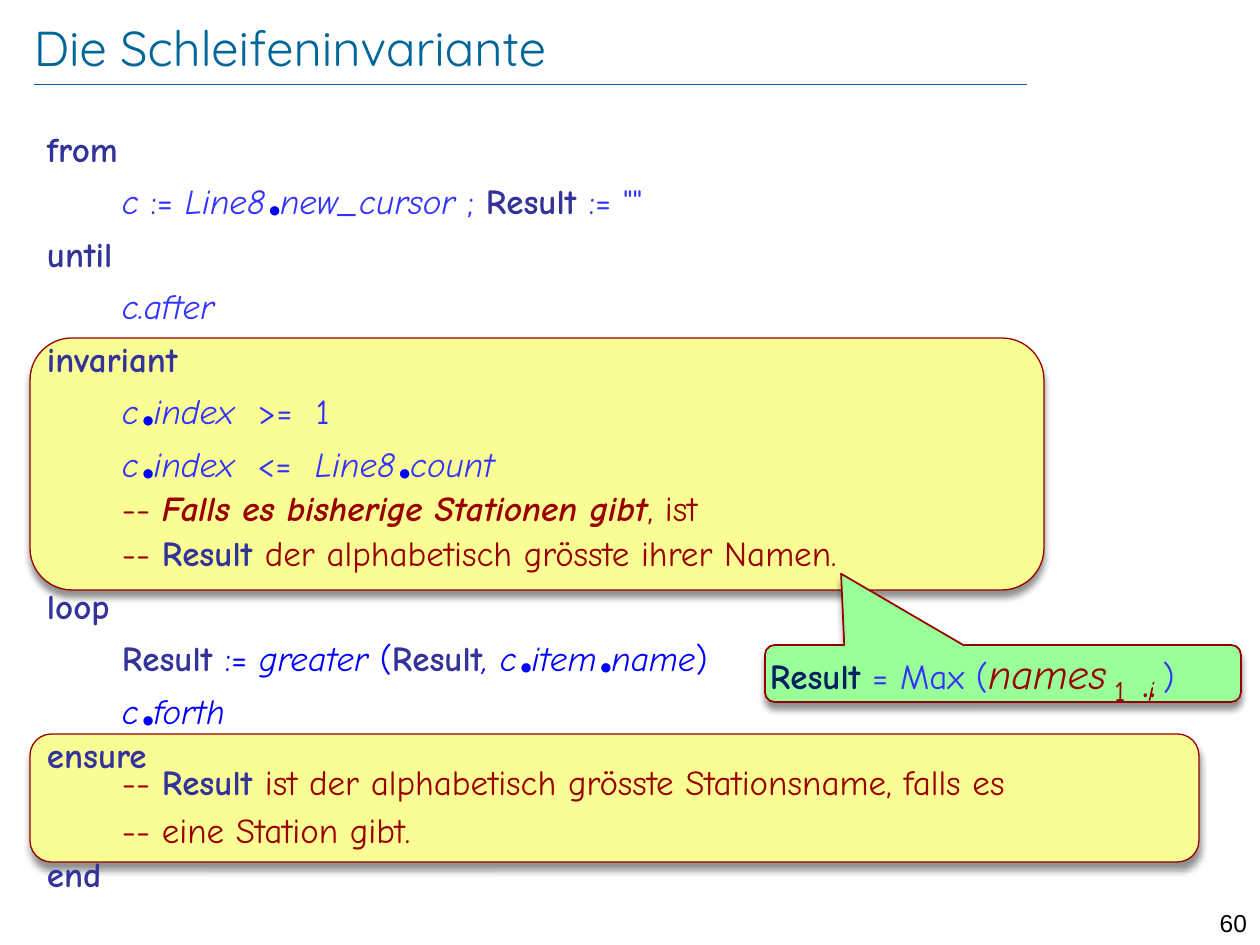
"""Build the slide that explains the loop invariant."""
from dataclasses import dataclass
from typing import NamedTuple

from lxml import etree
from pptx import Presentation, util as u
from pptx.dml.color import RGBColor
from pptx.enum import shapes, text
from pptx.oxml import ns

PX = u.Inches(1) / 126


@dataclass(frozen=True)
class Theme:
    code_font: str = "Comic Neue"
    title_font: str = "Quicksand"
    number_font: str = "Arial"
    title: str = "006699"
    keyword: str = "333399"
    code: str = "3333FF"
    call: str = "0000FF"
    comment: str = "990000"
    result: str = "002060"
    number: str = "000000"
    panel: str = "FAFC94"
    callout: str = "99FF99"
    body_size: int = 20
    dot_size: int = 7
    title_size: int = 28
    number_size: int = 14
    names_size: int = 24
    index_size: int = 28
    range_size: int = 44


THEME = Theme()


class Box(NamedTuple):
    left: int
    top: int
    width: int
    height: int


class Panel(NamedTuple):
    box: Box
    preset: shapes.MSO_SHAPE
    fill: str
    line_width: float
    adjustments: tuple = ()


class Line(NamedTuple):
    spans: list
    indent: int = 0
    before: float = 6
    spacing: float = 1
    tab: int = 0


STYLES = {
    "keyword": dict(color=THEME.keyword, bold=True),
    "code": dict(color=THEME.code),
    "name": dict(color=THEME.code, italic=True),
    "call": dict(color=THEME.call),
    "feature": dict(color=THEME.call, italic=True),
    "dot": dict(color=THEME.call, size=THEME.dot_size),
    "comment": dict(color=THEME.comment),
    "stress": dict(color=THEME.comment, bold=True, italic=True),
    "title": dict(color=THEME.title, size=THEME.title_size, font=THEME.title_font),
    "number": dict(color=THEME.number, size=THEME.number_size, font=THEME.number_font),
    "result": dict(color=THEME.result, bold=True),
    "names": dict(color=THEME.comment, size=THEME.names_size, italic=True),
    "gap": dict(color=THEME.comment, size=14, italic=True),
    "index": dict(color=THEME.comment, size=THEME.index_size, baseline=-25),
    "variable": dict(color=THEME.comment, size=THEME.index_size, italic=True, baseline=-25),
    "range": dict(color=THEME.comment, size=THEME.range_size, baseline=-25),
}

INDENT = 75
DOT = (" ●", "dot")
INDEX = [("c", "name"), DOT, ("index", "name")]
PROGRAM = [
    Line([("from", "keyword")], before=0),
    Line([("c", "name"), (" := ", "code"), ("Line8", "name"), DOT, ("new_cursor ", "name"),
          ("; ", "code"), ("Result ", "keyword"), (':= ""', "code")], INDENT),
    Line([("until", "keyword")]),
    Line([("c.after", "name")], INDENT),
    Line([("invariant", "keyword")]),
    Line([*INDEX, ("  >=  1", "code")], INDENT),
    Line([*INDEX, ("  <=  ", "code"), ("Line8", "name"), DOT, ("count", "name")], INDENT),
    Line([("-- ", "comment"), ("Falls es bisherige Stationen gibt", "stress"),
          (", ist", "comment")], INDENT, 4, 0.9),
    Line([("-- ", "comment"), ("Result ", "keyword"),
          ("der alphabetisch grösste ihrer Namen.", "comment")], INDENT, 4, 0.9),
    Line([("loop", "keyword")]),
    Line([("Result ", "keyword"), (":= ", "call"), ("greater ", "feature"), ("(", "call"),
          ("Result", "keyword"), (", c", "feature"), DOT, ("item", "feature"), DOT,
          ("name", "feature"), (")", "call")], INDENT),
    Line([("c", "feature"), DOT, ("forth", "feature")], INDENT),
    Line([("ensure", "keyword")], spacing=0.8),
    Line([("-- ", "comment"), ("Result ", "keyword"),
          ("ist der alphabetisch grösste Stationsname, falls es", "comment")], INDENT, 4, 0.4),
    Line([("-- eine Station gibt.", "comment")], INDENT, 17.5, 0.4),
    Line([("end", "keyword")], spacing=0.9),
]
MAXIMUM = Line([("Result", "result"), (" = Max (", "code"), ("names", "names"), (" ", "gap"),
                ("1\t", "index"), ("i", "variable"), (" ", "gap"), (")", "code")],
               before=0, spacing=0.6, tab=383)
PANELS = [
    Panel(Box(30, 734, 1169, 128), shapes.MSO_SHAPE.ROUNDED_RECTANGLE, THEME.panel, 0.75),
    Panel(Box(30, 338, 1014, 252), shapes.MSO_SHAPE.ROUNDED_RECTANGLE, THEME.panel, 0.75),
    Panel(Box(765, 645, 476, 57), shapes.MSO_SHAPE.ROUNDED_RECTANGULAR_CALLOUT,
          THEME.callout, 1, (-0.34, -1.75, 0.17)),
]


def px(length: int) -> int:
    """Turn pixels into EMU."""
    return round(length * PX)


def add_run(paragraph, content: str, *, color: str, size: int = THEME.body_size,
            font: str = THEME.code_font, bold: bool = False, italic: bool = False,
            baseline: int = 0) -> None:
    """Append formatted text to a paragraph."""
    run = paragraph.add_run()
    run.text = content
    run.font.name, run.font.size = font, u.Pt(size)
    run.font.bold, run.font.italic = bold, italic
    run.font.color.rgb = RGBColor.from_string(color)
    if baseline:
        run.font._element.set("baseline", str(baseline * 1000))


def add_text(slide, box: Box, lines: list[Line], *, insets: tuple = (13, 6),
             anchor=text.MSO_ANCHOR.TOP, align=text.PP_ALIGN.LEFT) -> None:
    """Draw a text box with one paragraph per line."""
    frame = slide.shapes.add_textbox(*map(px, box)).text_frame
    frame.word_wrap, frame.vertical_anchor = True, anchor
    frame.margin_left = frame.margin_right = px(insets[0])
    frame.margin_top = frame.margin_bottom = px(insets[1])
    for number, line in enumerate(lines):
        paragraph = frame.add_paragraph() if number else frame.paragraphs[0]
        paragraph.alignment = align
        paragraph.space_before, paragraph.line_spacing = u.Pt(line.before), line.spacing
        properties = paragraph._p.get_or_add_pPr()
        properties.set("marL", str(px(line.indent)))
        properties.set("indent", "0")
        if line.tab:
            stops = etree.SubElement(properties, ns.qn("a:tabLst"))
            etree.SubElement(stops, ns.qn("a:tab"), pos=str(px(line.tab)), algn="l")
        for content, style in line.spans:
            add_run(paragraph, content, **STYLES[style])


def add_panel(slide, panel: Panel) -> None:
    """Draw a filled panel with a soft shadow."""
    shape = slide.shapes.add_shape(panel.preset, *map(px, panel.box))
    for number, value in enumerate(panel.adjustments):
        shape.adjustments[number] = value
    shape.fill.solid()
    shape.fill.fore_color.rgb = RGBColor.from_string(panel.fill)
    shape.line.color.rgb = RGBColor.from_string(THEME.comment)
    shape.line.width = u.Pt(panel.line_width)
    shape.shadow.inherit = False
    effects = shape._element.spPr.find(ns.qn("a:effectLst"))
    shadow = etree.SubElement(effects, ns.qn("a:outerShdw"), blurRad=str(u.Pt(4)),
                              dist=str(u.Pt(4)), dir="5400000", rotWithShape="0")
    tint = etree.SubElement(shadow, ns.qn("a:srgbClr"), val="000000")
    etree.SubElement(tint, ns.qn("a:alpha"), val="43000")


def add_rule(slide, left: int, right: int, top: int) -> None:
    """Draw the thin rule below the title."""
    rule = slide.shapes.add_connector(shapes.MSO_CONNECTOR.STRAIGHT,
                                      px(left), px(top), px(right), px(top))
    rule.line.color.rgb = RGBColor.from_string(THEME.title)
    rule.line.width = u.Pt(0.25)
    etree.SubElement(rule._element.spPr, ns.qn("a:effectLst"))


def main() -> None:
    """Build and save the slide."""
    deck = Presentation()
    deck.slide_width, deck.slide_height = px(1260), px(945)
    slide = deck.slides.add_slide(deck.slide_layouts[6])
    add_rule(slide, 34, 1027, 84)
    add_text(slide, Box(1191, 902, 69, 30), [Line([("60", "number")], before=0)],
             align=text.PP_ALIGN.RIGHT)
    for panel in PANELS:
        add_panel(slide, panel)
    add_text(slide, Box(34, 121, 1184, 777), PROGRAM)
    add_text(slide, Box(34, 16, 1095, 61), [Line([("Die Schleifeninvariante", "title")], before=0)],
             insets=(0, 0), anchor=text.MSO_ANCHOR.MIDDLE)
    add_text(slide, Box(770, 651, 455, 47), [MAXIMUM], insets=(0, 6))
    add_text(slide, Box(1143, 601, 87, 93), [Line([("..", "range")], before=0)], insets=(0, 0))
    deck.save("out.pptx")


if __name__ == "__main__":
    main()
